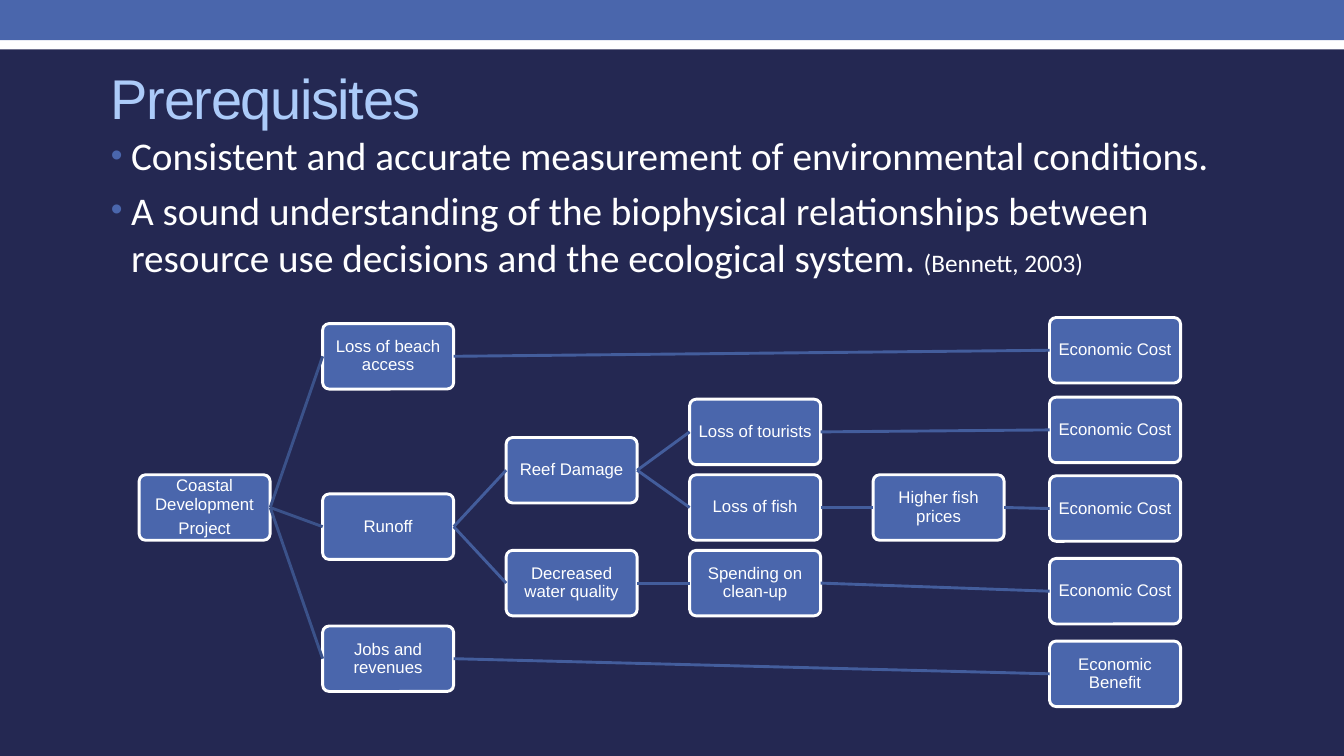
from dataclasses import dataclass
from lxml.etree import SubElement
from pptx import Presentation
from pptx.dml.color import RGBColor
from pptx.enum.shapes import MSO_CONNECTOR, MSO_SHAPE
from pptx.enum.text import MSO_ANCHOR, MSO_AUTO_SIZE, PP_ALIGN
from pptx.oxml.ns import qn
from pptx.shapes.autoshape import Shape
from pptx.slide import Slide
from pptx.text.text import _Paragraph as Paragraph
from pptx.text.text import _Run as Run
from pptx.util import Emu, Pt


@dataclass(frozen=True)
class Theme:
    background: str = "242852"
    accent: str = "4A66AC"
    heading: str = "ACCBF9"
    light: str = "FFFFFF"
    root_link: str = "3B528A"
    link: str = "435D9C"
    heading_font: str = "Arial"
    body_font: str = "Calibri"
    title_size: int = 40
    bullet_size: int = 28
    citation_size: int = 18
    node_size: int = 12
    line_width: float = 2.08


@dataclass(frozen=True)
class Band:
    top: int
    height: int
    color: str


@dataclass(frozen=True)
class Node:
    label: str
    left: int
    top: int
    children: tuple["Node", ...] = ()


THEME = Theme()
EMU_PER_PX = 9144
SLIDE_WIDTH, SLIDE_HEIGHT = 1333, 750
NODE_WIDTH, NODE_HEIGHT, NODE_INSET = 130, 65, 3
FIRST_COLUMN, COLUMN_PITCH = 138, 182
OUTCOME_LEFT = 1041
LEFT_SITE, RIGHT_SITE = 1, 3

BANDS = (Band(24, 25, THEME.light), Band(0, 40, THEME.accent))
BULLETS = (
    ("Consistent and accurate measurement of environmental conditions.", ""),
    (
        "A sound understanding of the biophysical relationships between "
        "resource use decisions and the ecological system. ",
        "(Bennett, 2003)",
    ),
)


def stage(column: int, top: int, label: str, *children: Node) -> Node:
    return Node(label, FIRST_COLUMN + column * COLUMN_PITCH, top, children)


def outcome(top: int, label: str = "Economic Cost") -> Node:
    return Node(label, OUTCOME_LEFT, top)


PROJECT = stage(
    0, 471, "Coastal Development\nProject",
    stage(1, 321, "Loss of beach access", outcome(315)),
    stage(
        1, 490, "Runoff",
        stage(
            2, 434, "Reef Damage",
            stage(3, 396, "Loss of tourists", outcome(394)),
            stage(3, 471, "Loss of fish",
                  stage(4, 471, "Higher fish prices", outcome(472))),
        ),
        stage(2, 546, "Decreased water quality",
              stage(3, 546, "Spending on clean-up", outcome(554))),
    ),
    stage(1, 621, "Jobs and revenues", outcome(636, "Economic Benefit")),
)


def px(length: int) -> Emu:
    return Emu(length * EMU_PER_PX)


def rgb(color: str) -> RGBColor:
    return RGBColor.from_string(color)


def place(shape: Shape, left: int, top: int, width: int, height: int) -> None:
    shape.left, shape.top = px(left), px(top)
    shape.width, shape.height = px(width), px(height)


def style_run(run: Run, font: str, size: int, color: str) -> None:
    run.font.name = font
    run.font.size = Pt(size)
    run.font.color.rgb = rgb(color)


def draw_band(slide: Slide, band: Band) -> None:
    stripe = slide.shapes.add_shape(
        MSO_SHAPE.RECTANGLE, 0, px(band.top), px(SLIDE_WIDTH), px(band.height))
    stripe.shadow.inherit = False
    stripe.fill.solid()
    stripe.fill.fore_color.rgb = rgb(band.color)
    stripe.line.fill.background()


def write_title(title: Shape) -> None:
    place(title, 100, 42, 892, 108)
    frame = title.text_frame
    frame.text = "Prerequisites"
    frame.auto_size = MSO_AUTO_SIZE.NONE
    frame.vertical_anchor = MSO_ANCHOR.MIDDLE
    heading = frame.paragraphs[0]
    heading.alignment = PP_ALIGN.LEFT
    style_run(heading.runs[0], THEME.heading_font, THEME.title_size, THEME.heading)
    heading.runs[0]._r.get_or_add_rPr().set("spc", "-100")


def add_bullet(paragraph: Paragraph) -> None:
    paragraph.space_before = Pt(THEME.bullet_size * 0.2)
    properties = paragraph._p.get_or_add_pPr()
    properties.set("marL", str(px(20)))
    properties.set("indent", str(px(-20)))
    bullet_color = SubElement(properties, qn("a:buClr"))
    SubElement(bullet_color, qn("a:srgbClr"), val=THEME.accent)
    SubElement(properties, qn("a:buSzPct"), val="85000")
    SubElement(properties, qn("a:buFont"), typeface=THEME.heading_font)
    SubElement(properties, qn("a:buChar"), char="•")


def write_bullets(body: Shape) -> None:
    place(body, 100, 125, 1117, 520)
    frame = body.text_frame
    frame.text = "\n".join(statement for statement, _ in BULLETS)
    frame.auto_size = MSO_AUTO_SIZE.NONE
    for paragraph, (_, citation) in zip(frame.paragraphs, BULLETS):
        add_bullet(paragraph)
        style_run(paragraph.runs[0], THEME.body_font, THEME.bullet_size, THEME.light)
        if citation:
            source = paragraph.add_run()
            source.text = citation
            style_run(source, THEME.body_font, THEME.citation_size, THEME.light)


def draw_node(slide: Slide, node: Node) -> Shape:
    box = slide.shapes.add_shape(
        MSO_SHAPE.ROUNDED_RECTANGLE,
        px(node.left), px(node.top), px(NODE_WIDTH), px(NODE_HEIGHT))
    box.adjustments[0] = 0.1
    box.shadow.inherit = False
    box.fill.solid()
    box.fill.fore_color.rgb = rgb(THEME.accent)
    box.line.color.rgb = rgb(THEME.light)
    box.line.width = Pt(THEME.line_width)
    frame = box.text_frame
    frame.text = node.label
    frame.word_wrap = True
    frame.vertical_anchor = MSO_ANCHOR.MIDDLE
    frame.margin_left = frame.margin_right = px(NODE_INSET)
    frame.margin_top = frame.margin_bottom = px(NODE_INSET)
    for paragraph in frame.paragraphs:
        paragraph.alignment = PP_ALIGN.CENTER
        paragraph.line_spacing = 0.9
        paragraph.space_after = Pt(THEME.node_size * 0.35)
        style_run(paragraph.runs[0], THEME.heading_font, THEME.node_size, THEME.light)
    return box


def link_boxes(slide: Slide, cause: Shape, effect: Shape, color: str) -> None:
    link = slide.shapes.add_connector(MSO_CONNECTOR.STRAIGHT, 0, 0, 0, 0)
    link.begin_connect(cause, RIGHT_SITE)
    link.end_connect(effect, LEFT_SITE)
    link.line.color.rgb = rgb(color)
    link.line.width = Pt(THEME.line_width)
    SubElement(link._element.spPr, qn("a:effectLst"))


def draw_tree(slide: Slide, node: Node, link_color: str) -> Shape:
    cause = draw_node(slide, node)
    for child in node.children:
        effect = draw_tree(slide, child, THEME.link)
        link_boxes(slide, cause, effect, link_color)
    return cause


def main() -> None:
    deck = Presentation()
    deck.slide_width, deck.slide_height = px(SLIDE_WIDTH), px(SLIDE_HEIGHT)
    slide = deck.slides.add_slide(deck.slide_layouts[1])
    slide.background.fill.solid()
    slide.background.fill.fore_color.rgb = rgb(THEME.background)
    for band in BANDS:
        draw_band(slide, band)
    write_title(slide.shapes.title)
    write_bullets(slide.placeholders[1])
    draw_tree(slide, PROJECT, THEME.root_link)
    deck.save("out.pptx")


if __name__ == "__main__":
    main()
